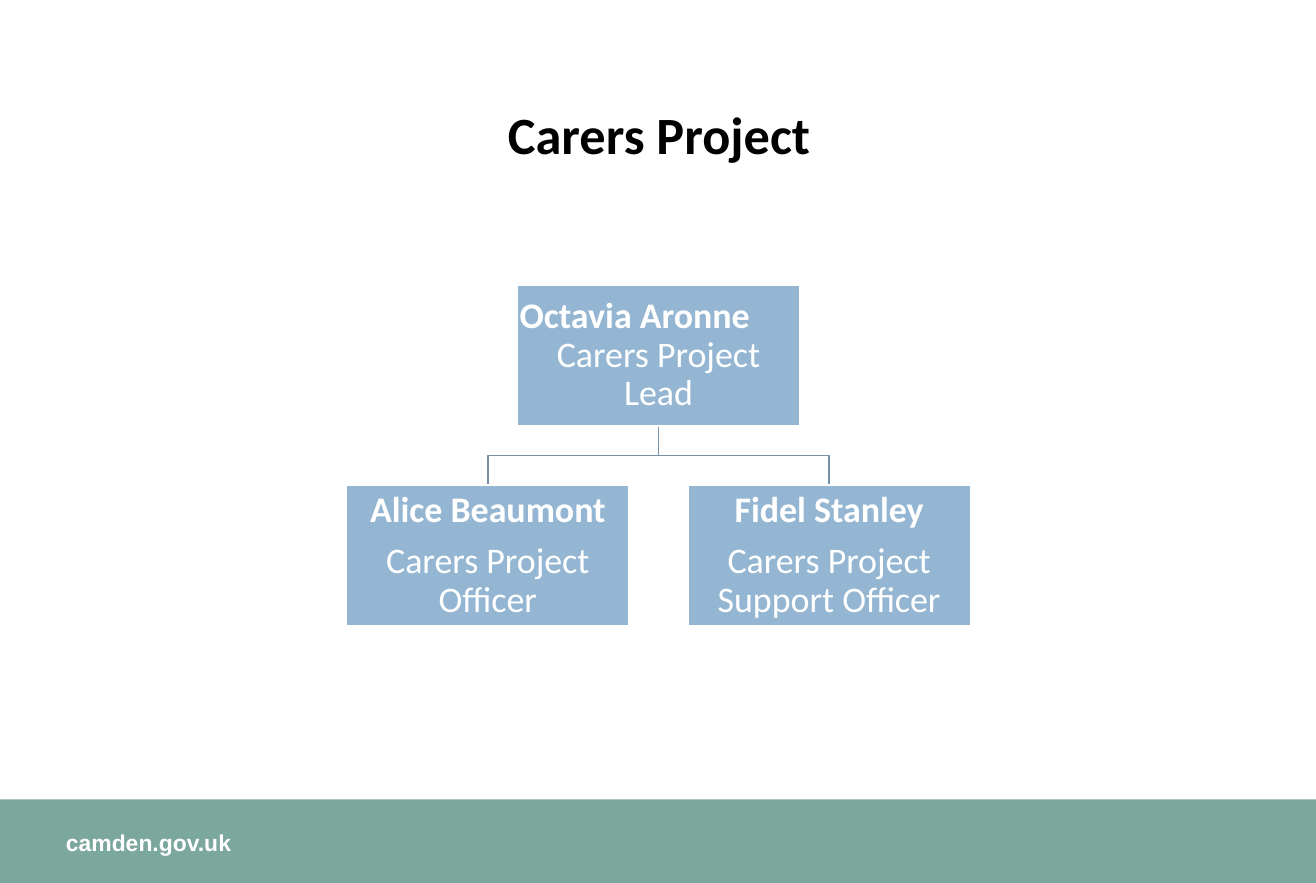
from pptx import Presentation
from pptx.dml.color import RGBColor
from pptx.enum.shapes import MSO_SHAPE
from pptx.enum.text import MSO_ANCHOR, PP_ALIGN
from pptx.util import Inches, Pt

RECT = MSO_SHAPE.RECTANGLE
MIDDLE = MSO_ANCHOR.MIDDLE
LEFT, CENTER = PP_ALIGN.LEFT, PP_ALIGN.CENTER

TITLE = "Carers Project"
FOOTER = "camden.gov.uk"
LEAD = ("Octavia Aronne", "Carers Project Lead")
OFFICERS = [
    ("Alice Beaumont", "Carers Project Officer"),
    ("Fidel Stanley", "Carers Project Support Officer"),
]

WIDTH, HEIGHT = 11.18, 7.5
BOX_W, BOX_H = 2.4, 1.2
GAP_X, GAP_Y = 0.5, 0.5
CHART_TOP = 2.42
BAND_TOP = 6.79
MID = WIDTH / 2 + 0.005


def color(value):
    return RGBColor.from_string(value)


def style(p, size, font, hue, bold, align):
    p.alignment = align
    for r in p.runs:
        r.font.size = Pt(size)
        r.font.name = font
        r.font.bold = bold
        r.font.color.rgb = color(hue)


def set_insets(tf, left, top, right, bottom):
    tf.margin_left, tf.margin_top = Inches(left), Inches(top)
    tf.margin_right, tf.margin_bottom = Inches(right), Inches(bottom)
    tf.word_wrap = True


def add_rect(s, x, y, w, h, fill, line=None):
    sp = s.shapes.add_shape(RECT, Inches(x), Inches(y), Inches(w), Inches(h))
    sp.shadow.inherit = False
    sp.fill.solid()
    sp.fill.fore_color.rgb = color(fill)
    if line:
        sp.line.color.rgb = color(line)
        sp.line.width = Pt(1)
    else:
        sp.line.fill.background()
    return sp


def add_person(s, center, top, person, name_align, gap):
    sp = add_rect(s, center - BOX_W / 2, top, BOX_W, BOX_H, "94B6D2", "FFFFFF")
    tf = sp.text_frame
    set_insets(tf, 0.02, 0.02, 0.02, 0.02)
    tf.vertical_anchor = MIDDLE
    tf.text = "\n".join(person)
    name, role = tf.paragraphs
    style(name, 22, "Calibri", "FFFFFF", True, name_align)
    style(role, 22, "Calibri", "FFFFFF", False, CENTER)
    for p in (name, role):
        p.line_spacing = 0.9
    name.space_after = Pt(gap)


def add_branch(s, center, top):
    bend = top + GAP_Y / 2
    points = [(MID, bend), (center, bend), (center, top + GAP_Y)]
    path = s.shapes.build_freeform(Inches(MID), Inches(top))
    path.add_line_segments([(Inches(x), Inches(y)) for x, y in points], close=False)
    sp = path.convert_to_shape()
    sp.shadow.inherit = False
    sp.fill.background()
    sp.line.color.rgb = color("7792A8")
    sp.line.width = Pt(1)


prs = Presentation()
prs.slide_width, prs.slide_height = Inches(WIDTH), Inches(HEIGHT)
s = prs.slides.add_slide(prs.slide_layouts[5])

add_rect(s, 0, BAND_TOP, WIDTH, HEIGHT - BAND_TOP, "7BA79D")
footer = s.shapes.add_textbox(Inches(0.56), Inches(7.04), Inches(4.61), Inches(0.24))
set_insets(footer.text_frame, 0, 0, 0.1, 0)
footer.text_frame.text = FOOTER
style(footer.text_frame.paragraphs[0], 14, "Arial", "FFFFFF", True, LEFT)

title = s.shapes.title
title.left, title.top = Inches(0.57), Inches(0.54)
title.width, title.height = Inches(10.06), Inches(1.25)
title.text_frame.text = TITLE
title.text_frame.vertical_anchor = MIDDLE
heading = title.text_frame.paragraphs[0]
heading.line_spacing = 0.9
style(heading, 32, "Calibri", "000000", True, CENTER)

lead_bottom = CHART_TOP + BOX_H
step = BOX_W + GAP_X
centers = [MID + (i - (len(OFFICERS) - 1) / 2) * step for i in range(len(OFFICERS))]
for center in centers:
    add_branch(s, center, lead_bottom)
add_person(s, MID, CHART_TOP, LEAD, LEFT, 0)
for center, officer in zip(centers, OFFICERS):
    add_person(s, center, lead_bottom + GAP_Y, officer, CENTER, 7.5)

prs.save("out.pptx")
